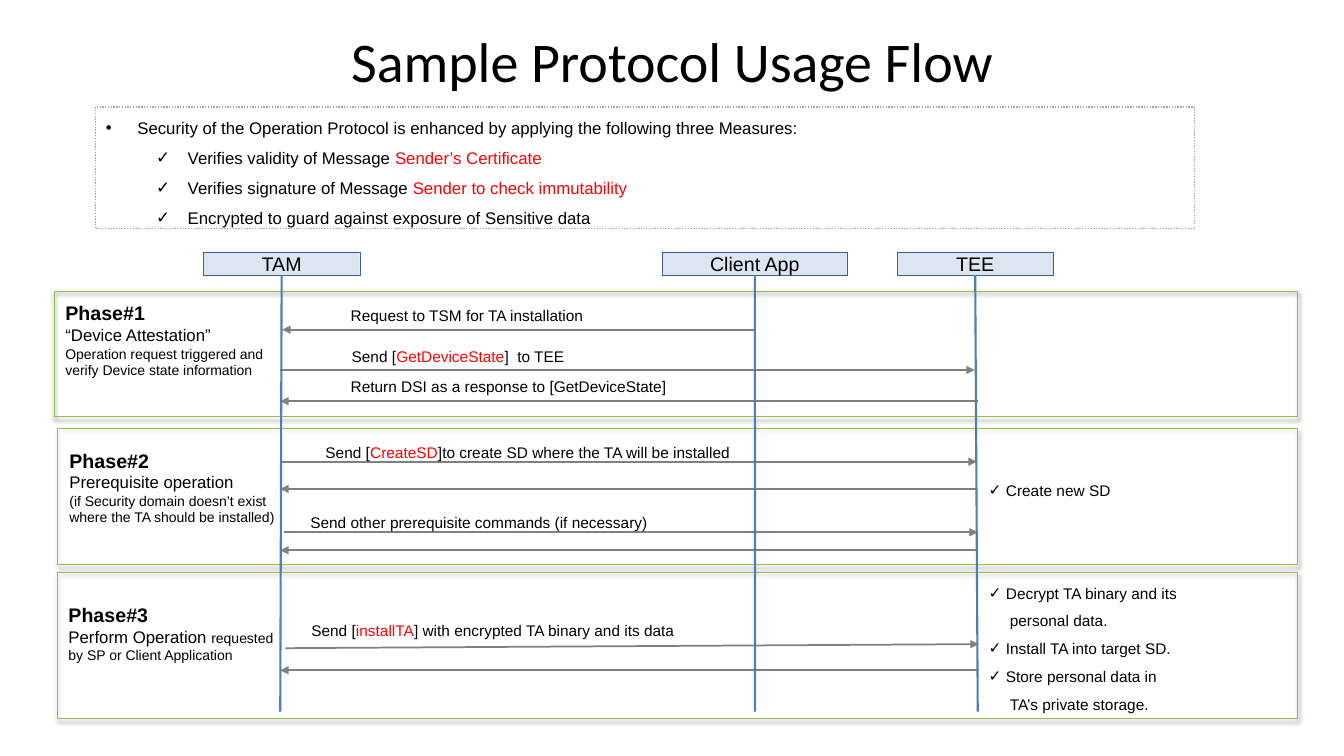
import pptx
import pptx.util
import pptx.dml.color
import pptx.enum.dml
import pptx.enum.shapes
import pptx.enum.text
import pptx.oxml
import pptx.oxml.ns

Pt = pptx.util.Pt
Tag = pptx.oxml.ns.qn
Mid = pptx.enum.text.MSO_ANCHOR.MIDDLE
Center = pptx.enum.text.PP_ALIGN.CENTER
Rect = pptx.enum.shapes.MSO_SHAPE.RECTANGLE
Line = pptx.enum.shapes.MSO_CONNECTOR.STRAIGHT

HUES = {"text": "000000", "red": "FF0000", "dots": "A6A6A6", "phase": "98B955",
        "arrow": "808080", "lane": "4B7EBC", "head": "DCE6F2", "edge": "3A5F8C"}
SHADE = ('<a:effectLst xmlns:a="http://schemas.openxmlformats.org/drawingml/2006/main">'
         '<a:outerShdw blurRad="40000" dist="20000" dir="5400000" rotWithShape="0">'
         '<a:srgbClr val="000000"><a:alpha val="38000"/></a:srgbClr>'
         '</a:outerShdw></a:effectLst>')


def hue(name):
    return pptx.dml.color.RGBColor.from_string(HUES[name])


def write(par, runs, size, face="Arial", bold=False):
    """Each run is a string, or a pair of string and colour or size."""
    for item in runs:
        text, mark = item if isinstance(item, tuple) else (item, None)
        run = par.add_run()
        run.text = text
        form = {"name": face, "bold": bold,
                "size": Pt(mark if isinstance(mark, (int, float)) else size)}
        for key, val in form.items():
            setattr(run.font, key, val)
        run.font.color.rgb = hue(mark if isinstance(mark, str) else "text")


def bullet(par, sign, left, hang):
    props = par._p.get_or_add_pPr()
    props.set("marL", str(Pt(left)))
    props.set("indent", str(Pt(-hang)))
    if sign:
        props.append(props.makeelement(Tag("a:buFont"), {"typeface": "Arial"}))
        props.append(props.makeelement(Tag("a:buChar"), {"char": sign}))


def place(shape, box):
    for key, val in zip(("left", "top", "width", "height"), box):
        setattr(shape, key, Pt(val))


def frame(slide, box, pad=3.6):
    area = slide.shapes.add_textbox(*map(Pt, box)).text_frame
    form = {"word_wrap": True, "margin_top": Pt(pad), "margin_bottom": Pt(pad)}
    for key, val in form.items():
        setattr(area, key, val)
    return area


def rows(area, count):
    return [area.paragraphs[0]] + [area.add_paragraph() for _ in range(count - 1)]


def block(slide, box, edge, width):
    shape = slide.shapes.add_shape(Rect, *map(Pt, box))
    shape.shadow.inherit = False
    shape.fill.background()
    shape.line.color.rgb = hue(edge)
    shape.line.width = Pt(width)
    return shape


def stroke(slide, start, end, color, width, tip=False):
    link = slide.shapes.add_connector(Line, *map(Pt, start + end))
    link.line.color.rgb = hue(color)
    link.line.width = Pt(width)
    props = link._element.spPr
    if tip:
        line = link.line._get_or_add_ln()
        line.append(line.makeelement(Tag("a:tailEnd"), {"type": "triangle"}))
    props.append(props.makeelement(Tag("a:effectLst"), {}))
    return link


def title(slide, box):
    shape = slide.shapes.title
    place(shape, box)
    shape.text_frame.vertical_anchor = Mid
    par = shape.text_frame.paragraphs[0]
    par.alignment = Center
    write(par, ["Sample Protocol Usage Flow"], 40, "Calibri")


def goals(slide, box):
    shape = slide.placeholders[1]
    place(shape, box)
    shape.line.color.rgb = hue("dots")
    shape.line.width = Pt(1)
    shape.line.dash_style = pptx.enum.dml.MSO_LINE.ROUND_DOT
    area = shape.text_frame
    area.auto_size = pptx.enum.text.MSO_AUTO_SIZE.NONE
    area.vertical_anchor = Mid
    lines = [
        ["Security of the Operation Protocol is enhanced by applying the following three Measures:"],
        ["Verifies validity of Message ", ("Sender’s Certificate", "red")],
        ["Verifies signature of Message ", ("Sender to check immutability", "red")],
        ["Encrypted to guard against exposure of Sensitive data"]]
    for spot, (par, runs) in enumerate(zip(rows(area, len(lines)), lines)):
        par.level = min(spot, 1)
        par.line_spacing = 1.5
        par.space_before = Pt(0)
        bullet(par, "✓" if spot else "•", 58.5 if spot else 22.5, 22.5)
        write(par, runs, 12)


def phase(slide, box, label, arrows, calls, notes=None):
    """All offsets are taken from the top left corner of the box."""
    left, top = box[:2]
    shape = block(slide, box, "phase", 0.75)
    props = shape._element.spPr
    props.remove(props.find(Tag("a:effectLst")))
    props.append(pptx.oxml.parse_xml(SHADE))

    # Arrows and messages
    for x1, y1, x2, y2 in arrows:
        stroke(slide, (left + x1, top + y1), (left + x2, top + y2), "arrow", 1.25, True)
    for x, y, runs in calls:
        area = frame(slide, (left + x, top + y, 412, 20.9))
        write(area.paragraphs[0], runs, 11)

    # Name of the phase
    x, y, high, lines = label
    area = frame(slide, (left + x, top + y, 162, high))
    for spot, (par, runs) in enumerate(zip(rows(area, len(lines)), lines)):
        write(par, runs, (14, 12, 10)[spot], bold=spot == 0)

    # Notes beside the TEE lane
    if notes:
        y, pad, space, lines = notes
        area = frame(slide, (left + 658.1, top + y, 220, 20.9 * len(lines)), pad)
        for par, (sign, text) in zip(rows(area, len(lines)), lines):
            par.line_spacing = space
            bullet(par, sign, 12.3 if sign else 15.1, 12.3 if sign else 0)
            write(par, [text], 11)


def actor(slide, box, name, foot):
    shape = block(slide, box, "edge", 0.25)
    shape.fill.solid()
    shape.fill.fore_color.rgb = hue("head")
    area = shape.text_frame
    area.vertical_anchor = Mid
    for side in ("top", "bottom"):
        setattr(area, "margin_" + side, Pt(0))
    area.paragraphs[0].alignment = Center
    write(area.paragraphs[0], [name], 14)
    left, top, wide, high = box
    lane = stroke(slide, (left + wide / 2, top + high), foot, "lane", 1.5)
    lane.begin_connect(shape, 2)


def main():
    deck = pptx.Presentation()
    deck.slide_width, deck.slide_height = Pt(960), Pt(540)
    slide = deck.slides.add_slide(deck.slide_layouts[1])
    title(slide, (48, 0, 864, 86))
    goals(slide, (68.4, 76.3, 784.8, 87.1))

    phase(slide, (41, 409, 885.6, 104.4),
          (0.8, 18, 51, [["Phase#3"],
                         ["Perform Operation ", ("requested by SP or Client Application", 10)]]),
          [(162.8, 54, 658.1, 51.1), (657.4, 69.8, 159.2, 69.8)],
          [(174.3, 30.9, ["Send [", ("installTA", "red"), "] with encrypted TA binary and its data"])],
          (1.4, 0, 1.5, [("✓", "Decrypt TA binary and its"), ("", "personal data."),
                         ("✓", "Install TA into target SD."), ("✓", "Store personal data in"),
                         ("", "TA’s private storage.")]))
    phase(slide, (41, 306, 885.6, 97.2),
          (1.5, 10.8, 75, [["Phase#2"], ["Prerequisite operation"],
                           ["(if Security domain doesn’t exist where the TA should be installed)"]]),
          [(160.6, 23.8, 656.7, 23.8), (656.7, 43.2, 159.2, 43.2),
           (162, 74.2, 657.4, 74.2), (656.7, 87.1, 159.2, 87.1)],
          [(184.4, 7.2, ["Send [", ("CreateSD", "red"),
                         "]to create SD where the TA will be installed"]),
           (173.6, 56.9, ["Send other prerequisite commands (if necessary)"])],
          (33.8, 3.6, 1.0, [("✓", "Create new SD")]))
    phase(slide, (38.9, 208.1, 887.8, 89.3),
          (0.7, 3.6, 63, [["Phase#1"], ["“Device Attestation”"],
                          ["Operation request triggered and verify Device state information"]]),
          [(500.4, 27.4, 162.7, 27.4), (161.3, 56.2, 657.3, 56.2), (659.5, 78.5, 161.3, 78.5)],
          [(204.5, 7.2, ["Request to TSM for TA installation"]),
           (205.2, 36, ["Send [", ("GetDeviceState", "red"), "]  to TEE"]),
           (204.5, 57.6, ["Return DSI as a response to [GetDeviceState]"])])

    # Actors and their lanes
    for name, left, wide, foot in (("TAM", 145.4, 111.6, 200.2),
                                   ("Client App", 473, 132.5, 539.3),
                                   ("TEE", 640.8, 111.6, 698.4)):
        actor(slide, (left, 180, wide, 16.6), name, (foot, 508.3))
    deck.save("out.pptx")


if __name__ == "__main__":
    main()
